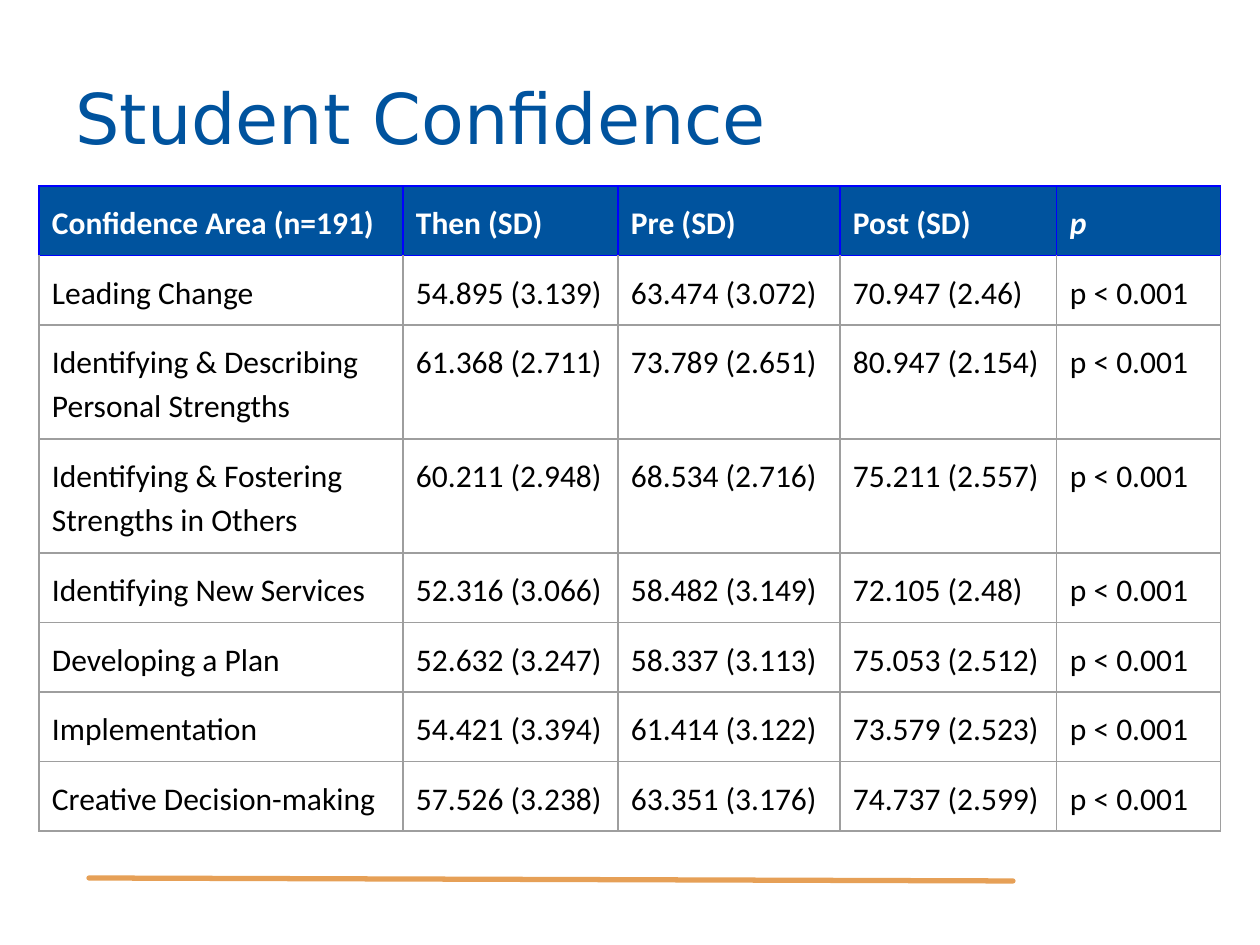
"""Build the Student Confidence slide with its table of survey scores."""
from lxml.etree import SubElement
from pptx import Presentation
from pptx.dml.color import RGBColor
from pptx.enum.shapes import MSO_CONNECTOR
from pptx.enum.text import MSO_ANCHOR, PP_ALIGN
from pptx.oxml.ns import qn
from pptx.util import Emu, Pt

COLORS = {
    "blue": "00539E",
    "header_edge": "0000FF",
    "body_edge": "9E9E9E",
    "orange": "E6A057",
    "white": "FFFFFF",
    "black": "000000",
}
COLUMN_WIDTHS = [364, 215, 222, 217, 164]
ROW_HEIGHTS = [69, 69, 114, 114, 69, 69, 69, 69]
CELL_MARGIN = 13
SCORES = [
    ("Confidence Area (n=191)", "Then (SD)", "Pre (SD)", "Post (SD)", "p"),
    ("Leading Change", "54.895 (3.139)", "63.474 (3.072)", "70.947 (2.46)", "p < 0.001"),
    ("Identifying & Describing Personal Strengths", "61.368 (2.711)", "73.789 (2.651)", "80.947 (2.154)", "p < 0.001"),
    ("Identifying & Fostering Strengths in Others", "60.211 (2.948)", "68.534 (2.716)", "75.211 (2.557)", "p < 0.001"),
    ("Identifying New Services", "52.316 (3.066)", "58.482 (3.149)", "72.105 (2.48)", "p < 0.001"),
    ("Developing a Plan", "52.632 (3.247)", "58.337 (3.113)", "75.053 (2.512)", "p < 0.001"),
    ("Implementation", "54.421 (3.394)", "61.414 (3.122)", "73.579 (2.523)", "p < 0.001"),
    ("Creative Decision-making", "57.526 (3.238)", "63.351 (3.176)", "74.737 (2.599)", "p < 0.001"),
]


def px(length):
    return Emu(round(length * 914400 / 126))


def add_run(paragraph, text, font_name, size, color):
    run = paragraph.add_run()
    run.text = text
    run.font.name = font_name
    run.font.size = Pt(size)
    run.font.color.rgb = RGBColor.from_string(COLORS[color])
    return run


presentation = Presentation()
presentation.slide_width, presentation.slide_height = px(1260), px(945)
slide = presentation.slides.add_slide(presentation.slide_layouts[6])

footer_rule = slide.shapes.add_connector(
    MSO_CONNECTOR.STRAIGHT, px(89), px(878), px(1013), px(881))
footer_rule.line.color.rgb = RGBColor.from_string(COLORS["orange"])
footer_rule.line.width = Pt(3)
footer_rule.line._get_or_add_ln().set("cap", "rnd")
SubElement(footer_rule._element.spPr, qn("a:effectLst"))

title = slide.shapes.add_textbox(px(63), px(38), px(1134), px(158)).text_frame
title.word_wrap = True
title.vertical_anchor = MSO_ANCHOR.MIDDLE
title.paragraphs[0].alignment = PP_ALIGN.LEFT
add_run(title.paragraphs[0], "Student Confidence", "DejaVu Sans", 40, "blue")

confidence = slide.shapes.add_table(
    len(ROW_HEIGHTS), len(COLUMN_WIDTHS), px(39), px(186),
    px(sum(COLUMN_WIDTHS)), px(sum(ROW_HEIGHTS))).table
confidence.horz_banding = False
for column, width in zip(confidence.columns, COLUMN_WIDTHS):
    column.width = px(width)
for row, height in zip(confidence.rows, ROW_HEIGHTS):
    row.height = px(height)

for row_index, scores in enumerate(SCORES):
    is_header = row_index == 0
    for column_index, score in enumerate(scores):
        cell = confidence.cell(row_index, column_index)
        cell.margin_left = cell.margin_right = px(CELL_MARGIN)
        cell.margin_top = cell.margin_bottom = px(CELL_MARGIN)
        cell.vertical_anchor = MSO_ANCHOR.TOP

        properties = cell._tc.get_or_add_tcPr()
        for side in ("lnL", "lnR", "lnT", "lnB"):
            blue_edge = is_header or (row_index == 1 and side == "lnT")
            edge = SubElement(properties, qn(f"a:{side}"), w=str(Pt(0.75)))
            edge_fill = SubElement(edge, qn("a:solidFill"))
            SubElement(edge_fill, qn("a:srgbClr"),
                       val=COLORS["header_edge" if blue_edge else "body_edge"])

        if is_header:
            cell.fill.solid()
            cell.fill.fore_color.rgb = RGBColor.from_string(COLORS["blue"])
        else:
            cell.fill.background()

        paragraph = cell.text_frame.paragraphs[0]
        paragraph.line_spacing = 1.15
        run = add_run(paragraph, score, "Calibri", 18, "white" if is_header else "black")
        run.font.bold = is_header
        run.font.italic = is_header and score == "p"

presentation.save("out.pptx")
